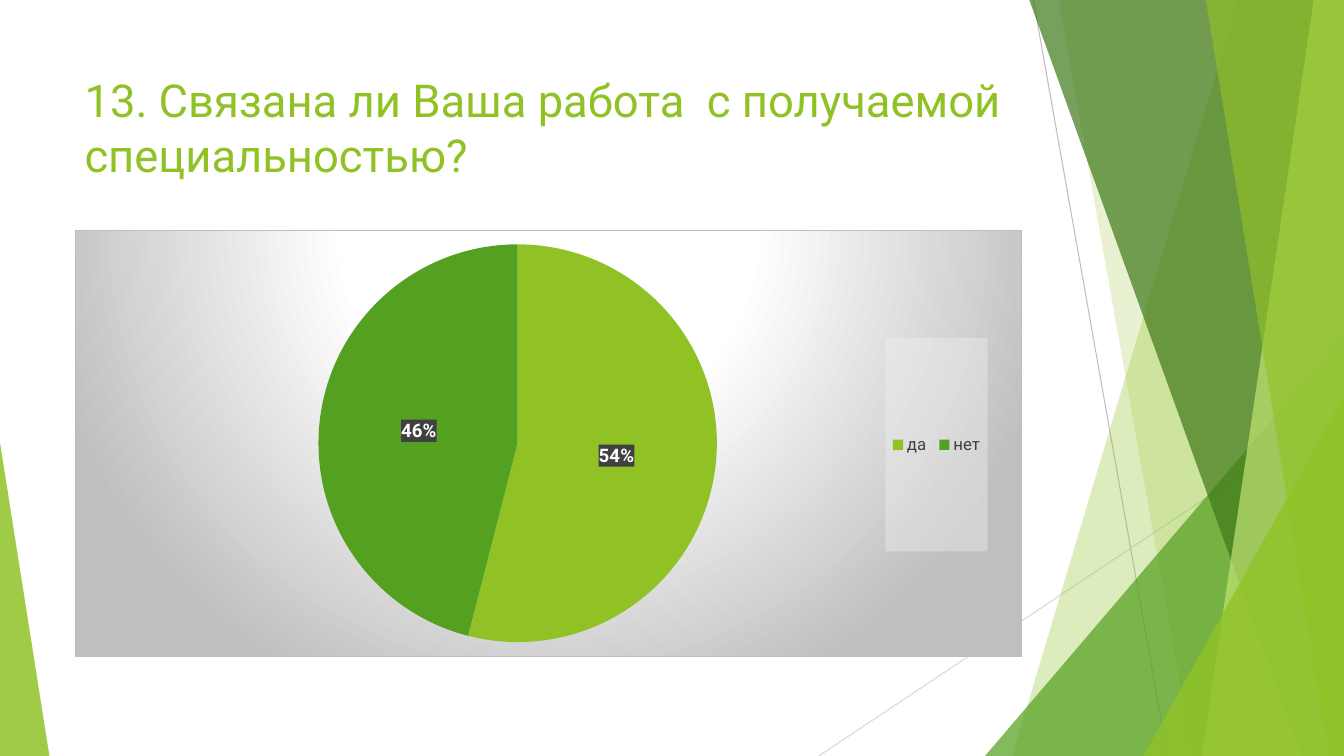
import pptx
import pptx.chart.data
import pptx.dml.color
import pptx.enum.chart
import pptx.enum.shapes
import pptx.oxml
import pptx.oxml.ns
import pptx.util
from lxml import etree

NAMESPACES = pptx.oxml.ns.nsdecls("a", "c")
qn = pptx.oxml.ns.qn

LIME, GREEN, DARK_GREEN, PALE_LIME = "90C226", "54A021", "3F7819", "C0E474"
WHITE, GREY, LIGHT_GREY, CHARCOAL = "FFFFFF", "BFBFBF", "D9D9D9", "404040"

# Each band runs to the right edge: top-left x, bottom-left x, colour, opacity
BACK_BANDS = [(92.12, 75.32, LIME, 30), (78.77, 88.75, LIME, 20)]
FRONT_BANDS = [(76.59, 96.85, DARK_GREEN, 70), (97.75, 89.42, PALE_LIME, 70),
               (89.72, 98.87, LIME, 65)]


def color(hex_string):
    return pptx.dml.color.RGBColor.from_string(hex_string)


def solid_fill_xml(hex_string, opacity):
    return (f'<a:solidFill><a:srgbClr val="{hex_string}">'
            f'<a:alpha val="{opacity * 1000}"/></a:srgbClr></a:solidFill>')


def chart_properties(content):
    return pptx.oxml.parse_xml(f"<c:spPr {NAMESPACES}>{content}</c:spPr>")


def chart_layout(left, top, width, height, inner=False):
    """Manual layout given as shares of the chart's size."""
    target = '<c:layoutTarget val="inner"/>' if inner else ""
    modes = '<c:xMode val="edge"/><c:yMode val="edge"/>'
    sizes = "".join(f'<c:{tag} val="{value}"/>' for tag, value
                    in zip("xywh", (left, top, width, height)))
    return pptx.oxml.parse_xml(f"<c:layout {NAMESPACES}><c:manualLayout>{target}{modes}"
                               f"{sizes}</c:manualLayout></c:layout>")


class SlideBuilder:
    """Draws on one slide; lengths are percentages of the slide's size."""
    font_name = "Roboto"

    def __init__(self, presentation):
        self.width = presentation.slide_width
        self.height = presentation.slide_height
        self.slide = presentation.slides.add_slide(presentation.slide_layouts[6])
        self.shapes = self.slide.shapes

    def place(self, x, y):
        return round(self.width * x / 100), round(self.height * y / 100)

    def box(self, left, top, width, height):
        return *self.place(left, top), *self.place(width, height)

    def style_font(self, font, size, hex_string, bold=False):
        font.name, font.size, font.bold = self.font_name, pptx.util.Pt(size), bold
        font.color.rgb = color(hex_string)

    def paint(self, shape, hex_string, opacity):
        shape.shadow.inherit = False
        shape.line.fill.background()
        shape.fill.solid()
        shape.fill.fore_color.rgb = color(hex_string)
        rgb = shape.fill._xPr.find(qn("a:solidFill"))[0]
        etree.SubElement(rgb, qn("a:alpha")).set("val", str(opacity * 1000))

    def line(self, start, end, hex_string):
        connector = self.shapes.add_connector(
            pptx.enum.shapes.MSO_CONNECTOR.STRAIGHT, *self.place(*start), *self.place(*end))
        connector.line.color.rgb = color(hex_string)
        connector.line.width = pptx.util.Pt(0.75)
        etree.SubElement(connector._element.spPr, qn("a:effectLst"))

    def band(self, top_x, bottom_x, hex_string, opacity):
        builder = self.shapes.build_freeform(*self.place(top_x, 0), scale=1.0)
        corners = [(100, 0), (100, 100), (bottom_x, 100)]
        builder.add_line_segments([self.place(*corner) for corner in corners], close=True)
        self.paint(builder.convert_to_shape(), hex_string, opacity)

    def triangle(self, left, top, width, apex, hex_string, opacity):
        """Triangle standing on the bottom edge of the slide."""
        shape = self.shapes.add_shape(pptx.enum.shapes.MSO_SHAPE.ISOSCELES_TRIANGLE,
                                      *self.box(left, top, width, 100 - top))
        shape.adjustments[0] = apex
        self.paint(shape, hex_string, opacity)

    def title(self, text, *area):
        text_frame = self.shapes.add_textbox(*self.box(*area)).text_frame
        text_frame.word_wrap = True
        text_frame.text = text
        self.style_font(text_frame.paragraphs[0].runs[0].font, 32.4, LIME)

    def pie(self, answers, point_colors, *area):
        data = pptx.chart.data.CategoryChartData()
        data.categories = list(answers)
        data.add_series("Series 1", list(answers.values()))
        chart = self.shapes.add_chart(pptx.enum.chart.XL_CHART_TYPE.PIE,
                                      *self.box(*area), data).chart
        chart.has_title = False
        self.style_font(chart.font, 10, "000000")
        plot = chart.plots[0]
        plot.vary_by_categories = True
        for index, hex_string in enumerate(point_colors):
            fill = plot.series[0].points[index].format.fill
            fill.solid()
            fill.fore_color.rgb = color(hex_string)
        self.label_pie(plot)
        self.add_legend(chart)
        self.style_chart_area(chart)

    def label_pie(self, plot):
        plot.has_data_labels = True
        labels = plot.data_labels
        labels.show_percentage, labels.show_value = True, False
        labels.number_format, labels.number_format_is_linked = "0%", False
        labels.position = pptx.enum.chart.XL_LABEL_POSITION.CENTER
        self.style_font(labels.font, 13.3, WHITE, bold=True)
        labels._element.find(qn("c:txPr")).addprevious(
            chart_properties(solid_fill_xml(CHARCOAL, 92)))

    def add_legend(self, chart):
        chart.has_legend = True
        legend = chart.legend
        legend.position = pptx.enum.chart.XL_LEGEND_POSITION.RIGHT
        legend.include_in_layout = False
        self.style_font(legend.font, 12, CHARCOAL)
        element = legend._element
        for old_layout in element.findall(qn("c:layout")):
            element.remove(old_layout)
        element.find(qn("c:legendPos")).addnext(chart_layout(0.856, 0.253, 0.108, 0.5))
        element.find(qn("c:txPr")).addprevious(
            chart_properties(solid_fill_xml("F2F2F2", 39)))

    def style_chart_area(self, chart):
        plot_area = chart._chartSpace.chart.plotArea
        for old_layout in plot_area.findall(qn("c:layout")):
            plot_area.remove(old_layout)
        plot_area.insert(0, chart_layout(0.257, 0.033, 0.421, 0.933, inner=True))
        stops = "".join(f'<a:gs pos="{share * 1000}"><a:srgbClr val="{hex_string}"/></a:gs>'
                        for share, hex_string in [(0, WHITE), (39, WHITE), (100, GREY)])
        chart._chartSpace.chart.addnext(chart_properties(
            f'<a:gradFill><a:gsLst>{stops}</a:gsLst><a:path path="circle">'
            '<a:fillToRect l="50000" t="-80000" r="50000" b="180000"/></a:path></a:gradFill>'
            f'<a:ln w="9525">{solid_fill_xml(GREY, 100)}</a:ln>'))


def main():
    presentation = pptx.Presentation()
    presentation.slide_width = pptx.util.Inches(13.33)
    presentation.slide_height = pptx.util.Inches(7.5)
    builder = SlideBuilder(presentation)

    builder.line((76.89, 0), (86.87, 100), GREY)
    builder.line((100, 53.73), (60.92, 100), LIGHT_GREY)
    for band in BACK_BANDS:
        builder.band(*band)
    builder.triangle(73.29, 44.4, 26.71, 1, GREEN, 72)
    for band in FRONT_BANDS:
        builder.band(*band)
    builder.triangle(85.07, 52.4, 14.93, 1, LIME, 80)
    builder.triangle(0, 58.53, 3.68, 0, LIME, 85)

    builder.title("13. Связана ли Ваша работа  с получаемой специальностью?",
                  5.55, 8.93, 70.52, 19.2)
    builder.pie({"да": 54, "нет": 46}, [LIME, GREEN], 5.55, 30.4, 70.52, 56.53)
    presentation.save("out.pptx")


if __name__ == "__main__":
    main()
